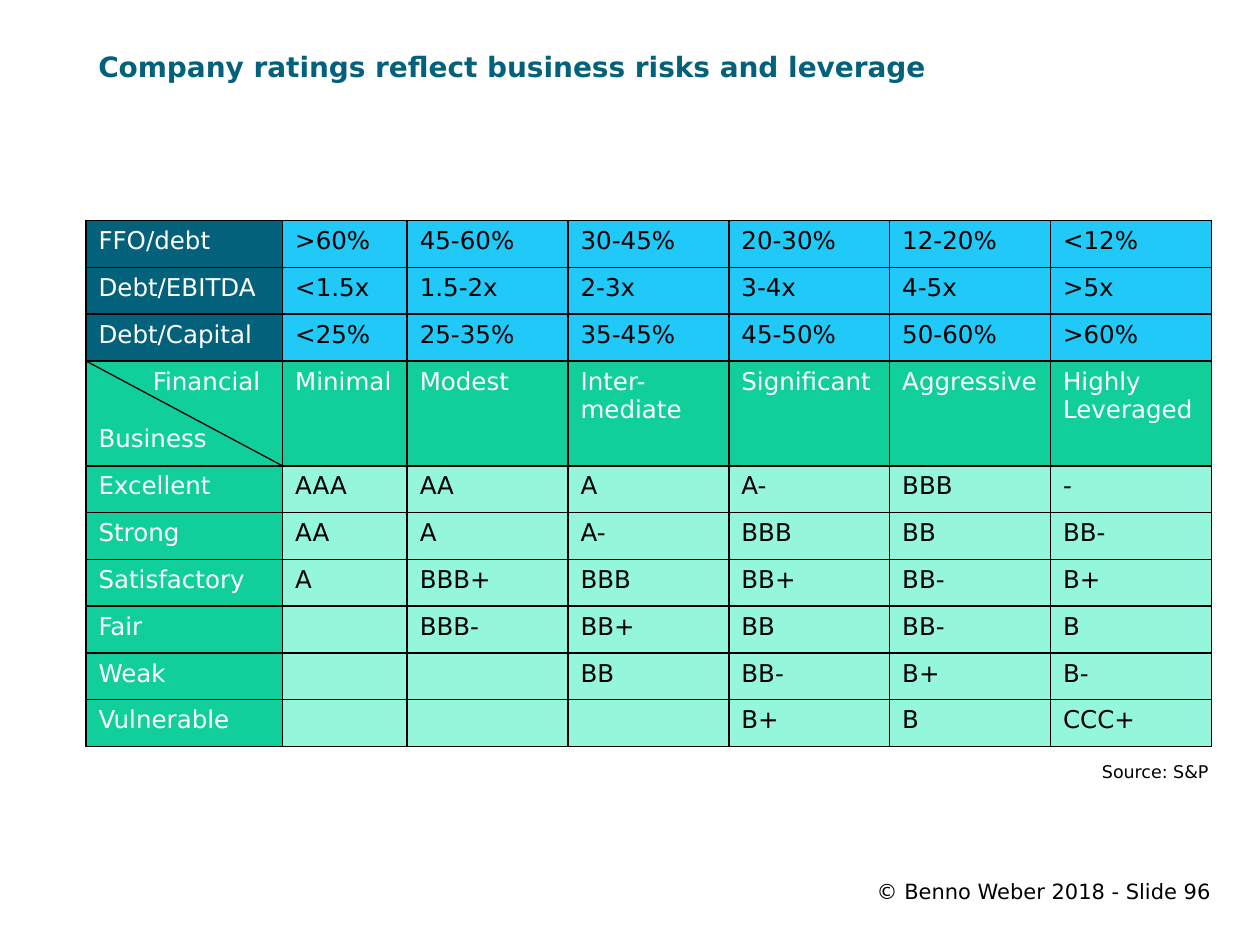
"""Build the slide on company ratings by business risk and leverage."""
from lxml import etree
from pptx import Presentation
from pptx.dml.color import RGBColor
from pptx.enum.shapes import MSO_CONNECTOR
from pptx.enum.text import MSO_ANCHOR, PP_ALIGN
from pptx.oxml.ns import qn
from pptx.util import Pt

STRAIGHT = MSO_CONNECTOR.STRAIGHT
TOP = MSO_ANCHOR.TOP
LEFT, RIGHT = PP_ALIGN.LEFT, PP_ALIGN.RIGHT

BLACK = RGBColor(0, 0, 0)
WHITE = RGBColor(255, 255, 255)
DARK_BLUE = RGBColor(0x04, 0x61, 0x7B)
BLUE = RGBColor(0x20, 0xC9, 0xF8)
GREEN = RGBColor(0x10, 0xCF, 0x9B)
LIGHT_GREEN = RGBColor(0x94, 0xF7, 0xDC)
FONT = "DejaVu Sans"

TITLE = "Company ratings reflect business risks and leverage"
SOURCE = "Source: S&P"
FOOTER = "© Benno Weber 2018 - Slide 96"
RATIOS = [
    ["FFO/debt", ">60%", "45-60%", "30-45%", "20-30%", "12-20%", "<12%"],
    ["Debt/EBITDA", "<1.5x", "1.5-2x", "2-3x", "3-4x", "4-5x", ">5x"],
    ["Debt/Capital", "<25%", "25-35%", "35-45%", "45-50%", "50-60%", ">60%"],
]
FINANCIAL_RISKS = ["Financial", "Minimal", "Modest", "Inter-mediate",
                   "Significant", "Aggressive", "Highly Leveraged"]
BUSINESS_AXIS = "Business"
RATINGS = [
    ["Excellent", "AAA", "AA", "A", "A-", "BBB", "-"],
    ["Strong", "AA", "A", "A-", "BBB", "BB", "BB-"],
    ["Satisfactory", "A", "BBB+", "BBB", "BB+", "BB-", "B+"],
    ["Fair", "", "BBB-", "BB+", "BB", "BB-", "B"],
    ["Weak", "", "", "BB", "BB-", "B+", "B-"],
    ["Vulnerable", "", "", "", "B+", "B", "CCC+"],
]
ROWS = RATIOS + [FINANCIAL_RISKS] + RATINGS
RISK_ROW = len(RATIOS)

TABLE_LEFT, TABLE_TOP = 49.1, 126
COLUMN_WIDTHS = [112.4, 71.2] + [91.9] * 5
ROW_HEIGHT, RISK_HEIGHT = 26.75, 60
ROW_HEIGHTS = [RISK_HEIGHT if row == RISK_ROW else ROW_HEIGHT
               for row in range(len(ROWS))]


def write(paragraph, text, size, color, bold=False, align=LEFT):
    paragraph.alignment = align
    run = paragraph.add_run()
    run.text = text
    run.font.name, run.font.size, run.font.bold = FONT, Pt(size), bold
    run.font.color.rgb = color


def set_frame(frame, margin_x, margin_y):
    frame.word_wrap = True
    frame.vertical_anchor = TOP
    frame.margin_left = frame.margin_right = Pt(margin_x)
    frame.margin_top = frame.margin_bottom = Pt(margin_y)


def add_note(slide, text, size, box, margins):
    frame = slide.shapes.add_textbox(*map(Pt, box)).text_frame
    set_frame(frame, *margins)
    write(frame.paragraphs[0], text, size, BLACK, align=RIGHT)


def add_borders(cell):
    properties = cell._tc.get_or_add_tcPr()
    for side in ("a:lnL", "a:lnR", "a:lnT", "a:lnB"):
        border = etree.SubElement(properties, qn(side), w=str(Pt(1)))
        fill = etree.SubElement(border, qn("a:solidFill"))
        etree.SubElement(fill, qn("a:srgbClr"), val=str(BLACK))


def cell_colors(row, column):
    if row < RISK_ROW:
        return (BLUE, BLACK) if column else (DARK_BLUE, WHITE)
    if row == RISK_ROW or column == 0:
        return GREEN, WHITE
    return LIGHT_GREEN, BLACK


def add_ratings_table(slide):
    table = slide.shapes.add_table(
        len(ROWS), len(COLUMN_WIDTHS), Pt(TABLE_LEFT), Pt(TABLE_TOP),
        Pt(sum(COLUMN_WIDTHS)), Pt(sum(ROW_HEIGHTS))).table
    for column, width in zip(table.columns, COLUMN_WIDTHS):
        column.width = Pt(width)
    for row, height in zip(table.rows, ROW_HEIGHTS):
        row.height = Pt(height)
    for row, texts in enumerate(ROWS):
        for column, text in enumerate(texts):
            cell = table.cell(row, column)
            fill, color = cell_colors(row, column)
            add_borders(cell)
            cell.fill.solid()
            cell.fill.fore_color.rgb = fill
            if text:
                write(cell.text_frame.paragraphs[0], text, 14, color)
            else:
                cell.margin_top = cell.margin_bottom = 0
    corner = table.cell(RISK_ROW, 0).text_frame
    corner.paragraphs[0]._p.get_or_add_pPr().set("marL", str(Pt(31)))
    business = corner.add_paragraph()
    business.space_before = Pt(16.3)
    write(business, BUSINESS_AXIS, 14, WHITE)


def add_corner_diagonal(slide):
    top = TABLE_TOP + sum(ROW_HEIGHTS[:RISK_ROW])
    diagonal = slide.shapes.add_connector(
        STRAIGHT, Pt(TABLE_LEFT), Pt(top),
        Pt(TABLE_LEFT + COLUMN_WIDTHS[0]), Pt(top + RISK_HEIGHT))
    diagonal.line.color.rgb = BLACK
    diagonal.line.width = Pt(0.75)
    etree.SubElement(diagonal._element.spPr, qn("a:effectLst"))


def main():
    presentation = Presentation()
    presentation.slide_width, presentation.slide_height = Pt(720), Pt(540)
    slide = presentation.slides.add_slide(presentation.slide_layouts[5])
    title = slide.shapes.title
    title.left, title.top, title.width, title.height = map(
        Pt, (50.4, 22.3, 643, 33.1))
    set_frame(title.text_frame, 5.76, 5.76)
    write(title.text_frame.paragraphs[0], TITLE, 16, DARK_BLUE, bold=True)
    add_ratings_table(slide)
    add_corner_diagonal(slide)
    add_note(slide, SOURCE, 10, (516.2, 431.3, 181.4, 19.4), (7.2, 3.6))
    add_note(slide, FOOTER, 12, (392.4, 496.1, 305.3, 25.9), (5.76, 5.76))
    presentation.save("out.pptx")


if __name__ == "__main__":
    main()
